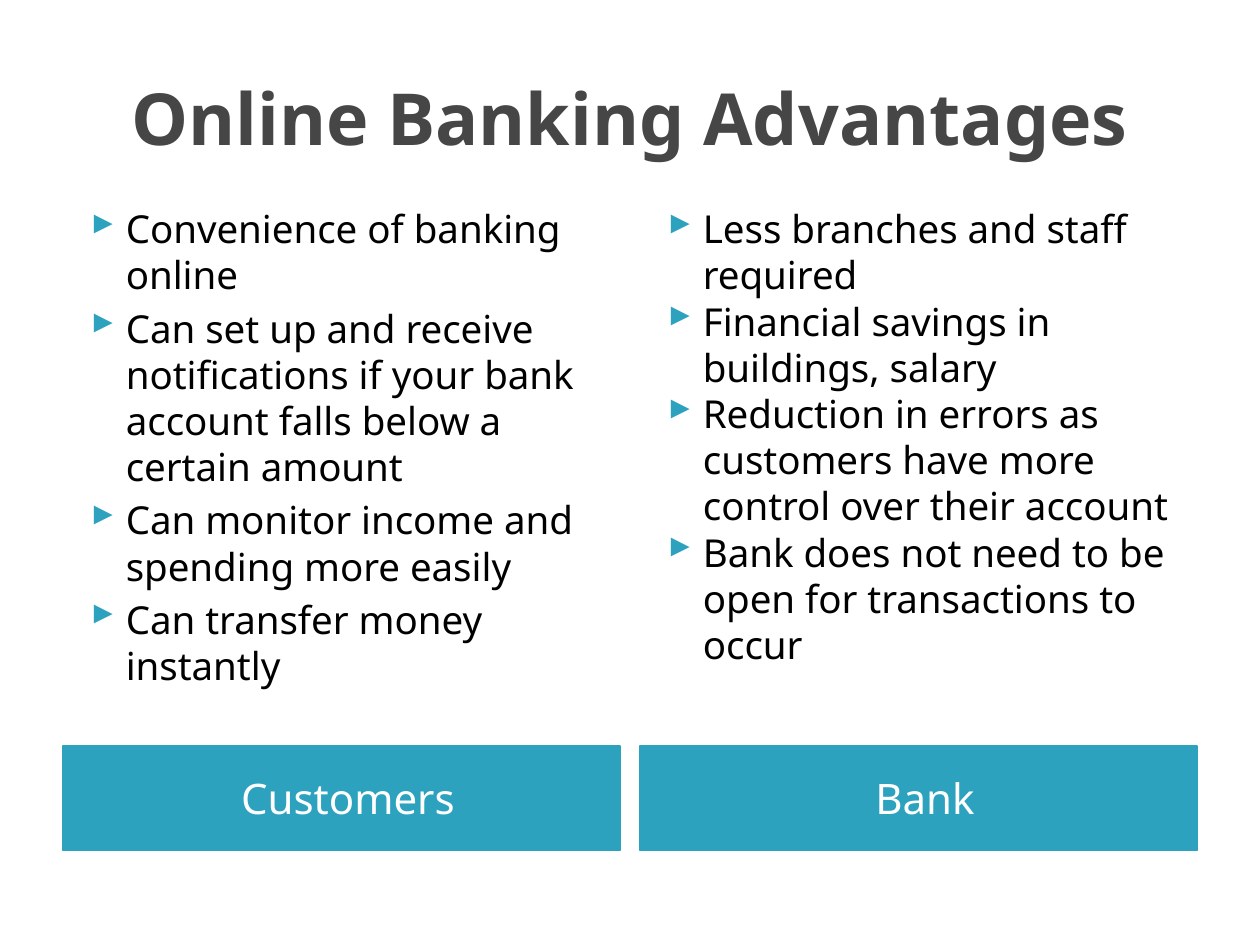
from dataclasses import dataclass

from lxml.etree import SubElement
from pptx import Presentation
from pptx.dml.color import RGBColor
from pptx.enum.shapes import MSO_SHAPE as Shape
from pptx.enum.text import MSO_ANCHOR as Anchor, MSO_AUTO_SIZE as Fit, PP_ALIGN as Align
from pptx.oxml.ns import qn
from pptx.util import Inches, Pt

FONT = "Noto Sans"
TEAL = "2DA2BF"
LEFT, WIDE, STEP = 0.5, 4.42, 4.58


@dataclass
class Column:
    label: str
    points: list[str]
    gap: float  # points between paragraphs


COLUMNS = [
    Column("Customers", [
        "Convenience of banking online",
        "Can set up and receive notifications if your bank account falls below a certain amount",
        "Can monitor income and spending more easily",
        "Can transfer money instantly",
    ], 4),
    Column("Bank", [
        "Less branches and staff required",
        "Financial savings in buildings, salary",
        "Reduction in errors as customers have more control over their account",
        "Bank does not need to be open for transactions to occur",
    ], 0),
]


def color(code: str) -> RGBColor:
    return RGBColor.from_string(code)


def write(para, text: str, size: float, code: str, bold: bool = False) -> None:
    run = para.add_run()
    run.text = text
    font = run.font
    font.name, font.size, font.bold = FONT, Pt(size), bold
    font.color.rgb = color(code)


def bullet(para) -> None:
    """Mark the paragraph with a teal triangle, which is "}" in the symbol font."""
    props = para._p.get_or_add_pPr()
    props.set("marL", str(Inches(0.4)))
    props.set("indent", str(Inches(-0.28)))
    tint = SubElement(props, qn("a:buClr"))
    SubElement(tint, qn("a:srgbClr")).set("val", TEAL)
    face = SubElement(props, qn("a:buFont"))
    face.set("typeface", "Wingdings 3")
    face.set("charset", "2")
    SubElement(props, qn("a:buChar")).set("char", "}")


def add_list(slide, left: float, col: Column) -> None:
    box = slide.shapes.add_textbox(Inches(left), Inches(1.58), Inches(WIDE), Inches(4.31))
    frame = box.text_frame
    frame.word_wrap = True
    for i, point in enumerate(col.points):
        para = frame.add_paragraph() if i else frame.paragraphs[0]
        para.space_before = Pt(col.gap if i else 0)
        bullet(para)
        write(para, point, 22, "000000")


def add_label(slide, left: float, text: str) -> None:
    bar = slide.shapes.add_shape(
        Shape.RECTANGLE, Inches(left), Inches(5.92), Inches(WIDE), Inches(0.83))
    bar.shadow.inherit = False
    bar.fill.solid()
    bar.fill.fore_color.rgb = color(TEAL)
    bar.line.color.rgb = color(TEAL)
    bar.line.width = Pt(0.75)
    frame = bar.text_frame
    frame.margin_left = Inches(0.2)
    frame.vertical_anchor = Anchor.MIDDLE
    para = frame.paragraphs[0]
    para.alignment = Align.CENTER
    write(para, text, 24, "FFFFFF")


def add_title(slide, text: str) -> None:
    title = slide.shapes.title
    title.left, title.top = Inches(LEFT), Inches(0.3)
    title.width, title.height = Inches(9), Inches(1.25)
    frame = title.text_frame
    frame.auto_size = Fit.NONE
    frame.vertical_anchor = Anchor.MIDDLE
    para = frame.paragraphs[0]
    para.alignment = Align.CENTER
    write(para, text, 41, "464646", True)


def main() -> None:
    deck = Presentation()
    deck.slide_width, deck.slide_height = Inches(10), Inches(7.5)
    slide = deck.slides.add_slide(deck.slide_layouts[5])
    add_title(slide, "Online Banking Advantages")
    for i, col in enumerate(COLUMNS):
        left = LEFT + i * STEP
        add_label(slide, left, col.label)
        add_list(slide, left, col)
    deck.save("out.pptx")


if __name__ == "__main__":
    main()
